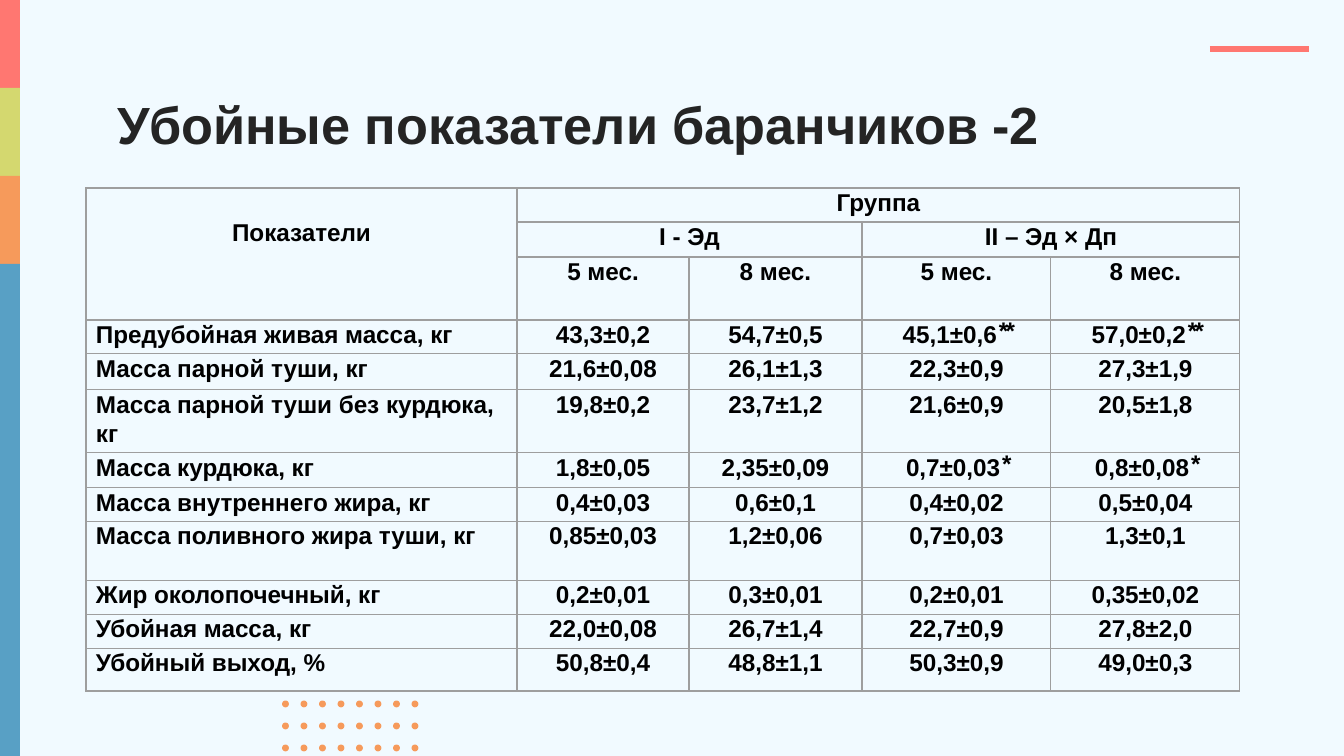
import pptx
import pptx.util
import pptx.dml.color
import pptx.enum.shapes
import pptx.enum.text
import pptx.oxml
from pptx.oxml.ns import nsdecls, qn
from lxml import etree

COLORS = {
    "background": "F1FAFF", "coral": "FF7771", "lime": "D4D86F",
    "orange": "F69A5B", "blue": "58A0C5", "title": "242424",
    "text": "000000", "border": "9E9E9E",
}
FONT = "Arial"
TITLE = "Убойные показатели баранчиков -2"
STRIPES = [("coral", 88), ("lime", 88), ("orange", 88), ("blue", 492)]
COLUMNS = [431, 172, 173, 189, 189]
ROW_HEIGHTS = [34, 35, 63, 34, 36, 60, 35, 34, 59, 34, 34, 43]
ROWS = [
    ["Показатели", "Группа", "", "", ""],
    ["", "I - Эд", "", "II – Эд × Дп", ""],
    ["", "5 мес.", "8 мес.", "5 мес.", "8 мес."],
    ["Предубойная живая масса, кг", "43,3±0,2", "54,7±0,5", "45,1±0,6 ⃰ ⃰", "57,0±0,2 ⃰ ⃰"],
    ["Масса парной туши, кг", "21,6±0,08", "26,1±1,3", "22,3±0,9", "27,3±1,9"],
    ["Масса парной туши без курдюка, кг", "19,8±0,2", "23,7±1,2", "21,6±0,9", "20,5±1,8"],
    ["Масса курдюка, кг", "1,8±0,05", "2,35±0,09", "0,7±0,03 ⃰", "0,8±0,08 ⃰"],
    ["Масса внутреннего жира, кг", "0,4±0,03", "0,6±0,1", "0,4±0,02", "0,5±0,04"],
    ["Масса поливного жира туши, кг", "0,85±0,03", "1,2±0,06", "0,7±0,03", "1,3±0,1"],
    ["Жир околопочечный, кг", "0,2±0,01", "0,3±0,01", "0,2±0,01", "0,35±0,02"],
    ["Убойная масса, кг", "22,0±0,08", "26,7±1,4", "22,7±0,9", "27,8±2,0"],
    ["Убойный выход, %", "50,8±0,4", "48,8±1,1", "50,3±0,9", "49,0±0,3"],
]
HEADER_ROWS = 3
MERGES = [((0, 0), (2, 0)), ((0, 1), (0, 4)), ((1, 1), (1, 2)), ((1, 3), (1, 4))]


def px(value):
    return pptx.util.Emu(round(value * 914400 / 134.4))


def color(name):
    return pptx.dml.color.RGBColor.from_string(COLORS[name])


def add_filled(page, kind, fill, left, top, width, height):
    shape = page.shapes.add_shape(kind, px(left), px(top), px(width), px(height))
    shape.shadow.inherit = False
    shape.fill.solid()
    shape.fill.fore_color.rgb = color(fill)
    shape.line.fill.background()
    return shape


def style_font(font, size, name):
    font.name = FONT
    font.size = pptx.util.Pt(size)
    font.bold = True
    font.color.rgb = color(name)


def add_decor(page):
    shapes = pptx.enum.shapes.MSO_SHAPE
    top = 0
    for name, height in STRIPES:
        add_filled(page, shapes.RECTANGLE, name, 0, top, 20, height)
        top += height
    accent = page.shapes.add_connector(
        pptx.enum.shapes.MSO_CONNECTOR.STRAIGHT, px(1210), px(49), px(1309), px(49))
    accent.line.color.rgb = color("coral")
    accent.line.width = pptx.util.Pt(3)
    etree.SubElement(accent._element.spPr, qn("a:effectLst"))
    for row in range(3):
        for column in range(8):
            dot = add_filled(page, shapes.OVAL, "orange",
                             283.5 + 18.5 * column, 702 + 22 * row, 4, 4)
            dot.line.color.rgb = color("orange")
            dot.line.width = pptx.util.Pt(1.5)


def add_title(page):
    box = page.shapes.add_textbox(px(105), px(79), px(1134), px(85))
    frame = box.text_frame
    frame.word_wrap = True
    frame.margin_left = frame.margin_right = px(13)
    frame.margin_top = frame.margin_bottom = px(13)
    frame.text = TITLE
    style_font(frame.paragraphs[0].runs[0].font, 28, "title")


def add_borders(cell):
    properties = cell._tc.get_or_add_tcPr()
    for side in ("lnL", "lnR", "lnT", "lnB"):
        properties.append(pptx.oxml.parse_xml(
            f'<a:{side} {nsdecls("a")} w="9525"><a:solidFill>'
            f'<a:srgbClr val="{COLORS["border"]}"/></a:solidFill></a:{side}>'))


def add_data_table(page):
    align = pptx.enum.text.PP_ALIGN
    frame = page.shapes.add_table(len(ROWS), len(COLUMNS), px(86), px(188),
                                  px(sum(COLUMNS)), px(sum(ROW_HEIGHTS)))
    table = frame.table
    table.first_row = table.horz_banding = False
    for column, width in zip(table.columns, COLUMNS):
        column.width = px(width)
    for row, height in zip(table.rows, ROW_HEIGHTS):
        row.height = px(height)
    for row_index, values in enumerate(ROWS):
        for column_index, value in enumerate(values):
            cell = table.cell(row_index, column_index)
            add_borders(cell)
            cell.fill.background()
            cell.margin_left = cell.margin_right = px(10)
            cell.margin_top = cell.margin_bottom = 0
            cell.text_frame.text = value
            para = cell.text_frame.paragraphs[0]
            is_label = column_index == 0 and row_index >= HEADER_ROWS
            para.alignment = align.LEFT if is_label else align.CENTER
            para.line_spacing = 1.07
            style_font(para.font, 13, "text")
            for span in para.runs:
                style_font(span.font, 13, "text")
    table.cell(0, 0).margin_top = px(30)
    for first, last in MERGES:
        table.cell(*first).merge(table.cell(*last))


def main():
    deck = pptx.Presentation()
    deck.slide_width, deck.slide_height = px(1344), px(756)
    page = deck.slides.add_slide(deck.slide_layouts[6])
    page.background.fill.solid()
    page.background.fill.fore_color.rgb = color("background")
    add_decor(page)
    add_title(page)
    add_data_table(page)
    deck.save("out.pptx")


if __name__ == "__main__":
    main()
